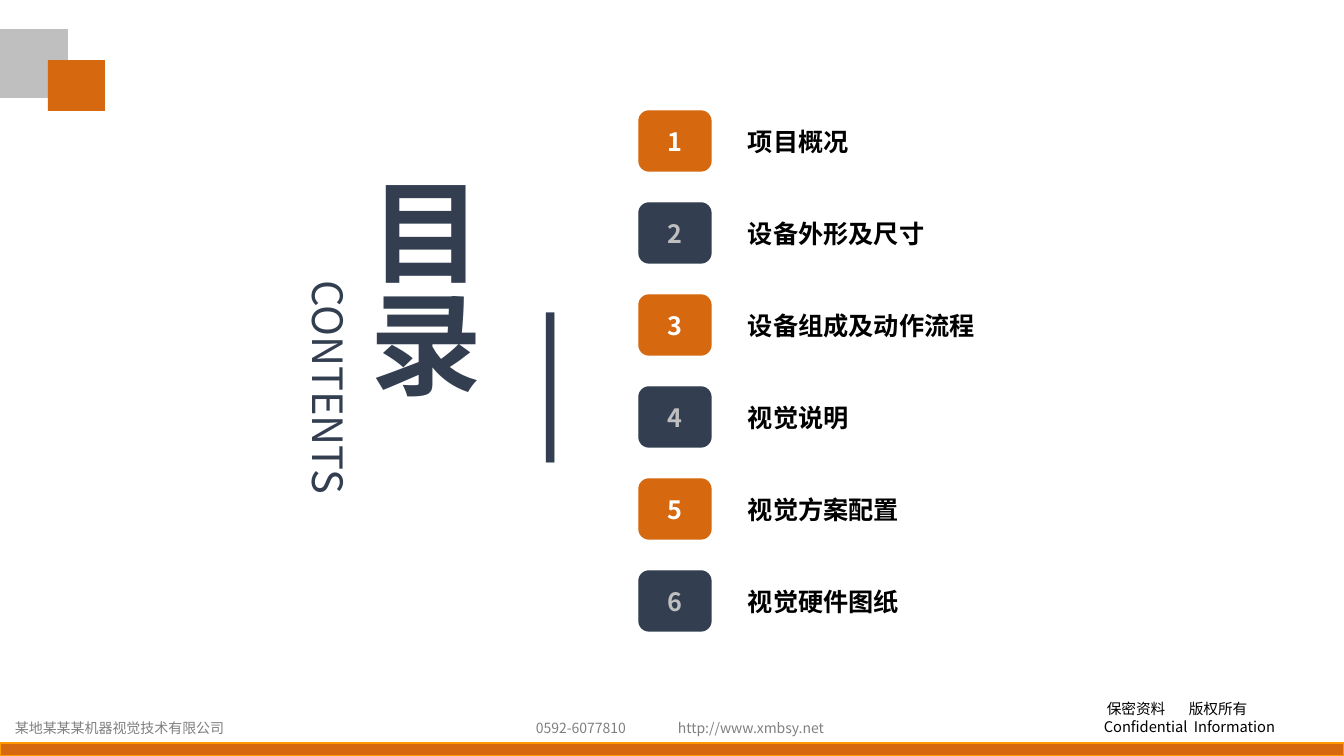
from lxml import etree
from pptx import Presentation
from pptx import util as u
from pptx.dml.color import RGBColor
from pptx.enum import shapes, text
from pptx.oxml import ns

ORANGE = RGBColor(0xD6, 0x68, 0x0F)
AMBER = RGBColor(0xFF, 0x99, 0x00)
NAVY = RGBColor(0x33, 0x3F, 0x50)
SILVER = RGBColor(0xBF, 0xBF, 0xBF)
GREY = RGBColor(0x80, 0x80, 0x80)
BLACK = RGBColor(0, 0, 0)
WHITE = RGBColor(0xFF, 0xFF, 0xFF)

EMU_PER_PX = 914400 / 100.8
LEFT, CENTER = text.PP_ALIGN.LEFT, text.PP_ALIGN.CENTER


def px(length):
    return u.Emu(round(length * EMU_PER_PX))


class ContentsSlide:
    font = "Noto Sans CJK SC"

    def __init__(self, prs):
        self.slide = prs.slides.add_slide(prs.slide_layouts[5])

    def style(self, paragraph, size, color, bold=False, align=LEFT):
        paragraph.alignment = align
        font = paragraph.font
        font.name, font.size, font.bold = self.font, u.Pt(size), bold
        font.color.rgb = color
        # East Asian glyphs use the same face
        latin = font._element.find(ns.qn("a:latin"))
        east_asian = etree.Element(ns.qn("a:ea"), typeface=self.font)
        latin.addnext(east_asian)

    def title(self, words, x, y, w, h, size, color):
        title = self.slide.shapes.title
        title.left, title.top, title.width, title.height = map(px, (x, y, w, h))
        frame = title.text_frame
        frame.text = words
        frame.margin_left = frame.margin_right = 0
        frame.margin_top = frame.margin_bottom = 0
        frame.vertical_anchor = text.MSO_ANCHOR.MIDDLE
        frame.auto_size = text.MSO_AUTO_SIZE.NONE
        frame._txBody.bodyPr.set("vert", "eaVert")
        self.style(frame.paragraphs[0], size, color, bold=True)

    def block(self, x, y, w, h, fill, line=None,
              kind=shapes.MSO_SHAPE.RECTANGLE):
        block = self.slide.shapes.add_shape(kind, *map(px, (x, y, w, h)))
        block.shadow.inherit = False
        block.fill.solid()
        block.fill.fore_color.rgb = fill
        if line is None:
            block.line.fill.background()
        else:
            block.line.color.rgb = line
            block.line.width = u.Pt(1)
        return block

    def chip(self, number, x, y, w, h, fill, color):
        chip = self.block(x, y, w, h, fill, fill,
                          shapes.MSO_SHAPE.ROUNDED_RECTANGLE)
        chip.text_frame.text = number
        chip.text_frame.vertical_anchor = text.MSO_ANCHOR.MIDDLE
        self.style(chip.text_frame.paragraphs[0], 18, color, True, CENTER)

    def label(self, words, x, y, w, h, size, color, bold=False, align=LEFT,
              wrap=True):
        label = self.slide.shapes.add_textbox(*map(px, (x, y, w, h)))
        frame = label.text_frame
        frame.word_wrap = wrap
        frame.auto_size = text.MSO_AUTO_SIZE.SHAPE_TO_FIT_TEXT
        frame.text = words
        self.style(frame.paragraphs[0], size, color, bold, align)
        return label

    def tabbed_lines(self, lines, x, y, w, h, size, color):
        """Each line is (words, indent, tab position)."""
        box = self.slide.shapes.add_textbox(*map(px, (x, y, w, h)))
        frame = box.text_frame
        frame.word_wrap = True
        frame.text = "\n".join(words for words, _, _ in lines)
        for paragraph, (_, indent, stop) in zip(frame.paragraphs, lines):
            props = paragraph._p.get_or_add_pPr()
            props.set("marL", str(px(indent)))
            tabs = etree.SubElement(props, ns.qn("a:tabLst"))
            etree.SubElement(tabs, ns.qn("a:tab"), pos=str(px(stop)), algn="l")
            self.style(paragraph, size, color)


def main():
    prs = Presentation()
    prs.slide_width, prs.slide_height = px(1344), px(756)
    page = ContentsSlide(prs)

    # Heading
    page.title("目录", 355, 176, 135, 395, 79.9, NAVY)
    contents = page.label("CONTENTS", 157, 362, 344, 50, 29.8, NAVY,
                          align=CENTER)
    contents.rotation = 90
    frame = contents.text_frame
    frame.margin_left = frame.margin_right = 0
    frame.margin_top = frame.margin_bottom = 0
    page.label("|", 523, 286, 51, 173, 96, NAVY, wrap=False)

    # Corner squares
    page.block(-1, 29, 69, 69, SILVER)
    page.block(48, 60, 57, 51, ORANGE)

    # Numbered chapters: words and label width
    chapters = [
        ("项目概况", 154),
        ("设备外形及尺寸", 203),
        ("设备组成及动作流程", 263),
        ("视觉说明", 127),
        ("视觉方案配置", 210),
        ("视觉硬件图纸", 208),
    ]
    chip_colors = [(ORANGE, WHITE), (NAVY, SILVER)]
    for index, (chapter, width) in enumerate(chapters):
        top = 111 + 92 * index
        page.chip(str(index + 1), 639, top, 72, 60, *chip_colors[index % 2])
        page.label(chapter, 738, top + 10, width, 40, 18, BLACK, bold=True)

    # Footer
    page.block(0, 743, 1344, 13, ORANGE, AMBER)
    for words, x, width in [
        ("某地某某某机器视觉技术有限公司", 5, 237),
        ("0592-6077810", 526, 111),
        ("http://www.xmbsy.net", 668, 168),
    ]:
        page.label(words, x, 715, width, 27, 10, GREY)
    notice = [("保密资料\t版权所有", 3, 82), ("Confidential\tInformation", 0, 90)]
    page.tabbed_lines(notice, 1094, 695, 219, 45, 10.5, BLACK)

    prs.save("out.pptx")


if __name__ == "__main__":
    main()
